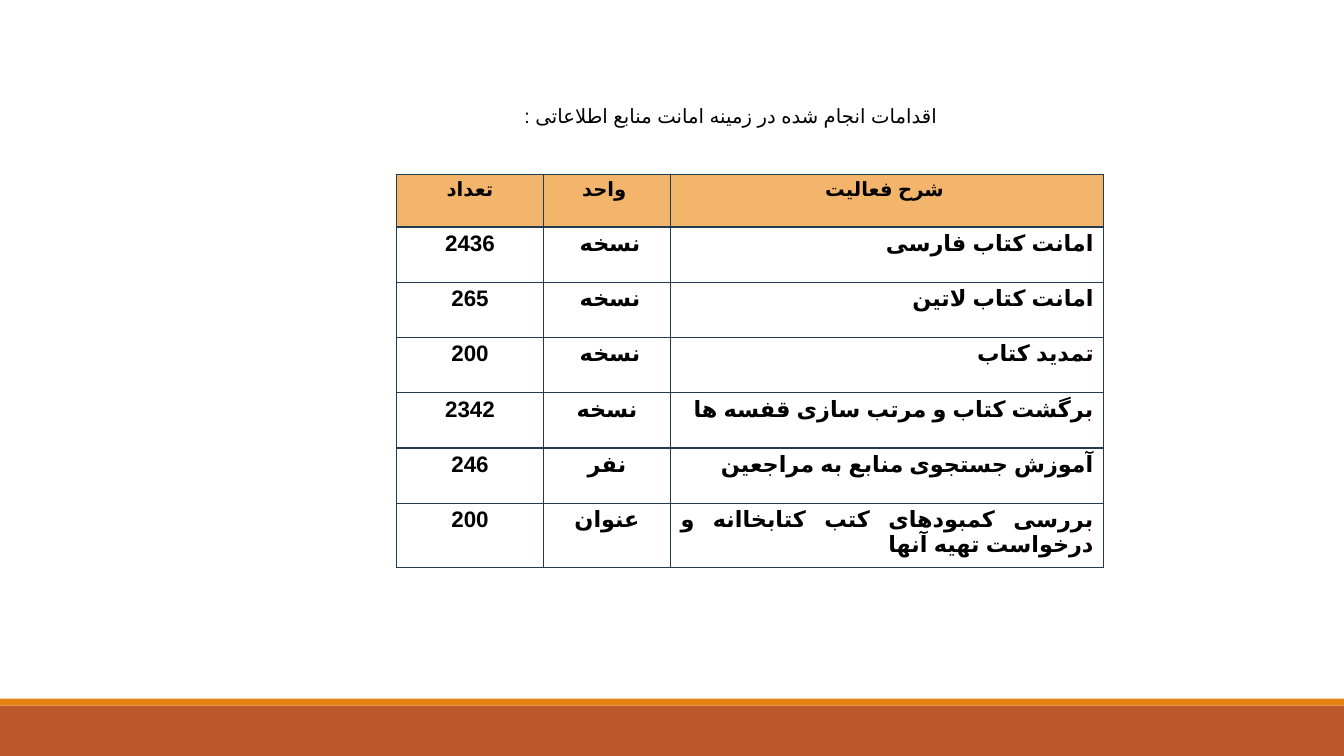
from dataclasses import dataclass

from lxml import etree
from pptx import Presentation
from pptx.dml.color import RGBColor
from pptx.enum.lang import MSO_LANGUAGE_ID
from pptx.enum.shapes import MSO_SHAPE
from pptx.enum.text import MSO_ANCHOR, MSO_AUTO_SIZE, PP_ALIGN
from pptx.oxml.ns import qn
from pptx.util import Pt

RECTANGLE = MSO_SHAPE.RECTANGLE
TOP = MSO_ANCHOR.TOP
NO_AUTOFIT = MSO_AUTO_SIZE.NONE
CENTER, RIGHT, JUSTIFY = PP_ALIGN.CENTER, PP_ALIGN.RIGHT, PP_ALIGN.JUSTIFY
PERSIAN = MSO_LANGUAGE_ID.FARSI

TITLE = "اقدامات انجام شده در زمینه امانت منابع اطلاعاتی :"
HEADER = ("تعداد", "واحد ", "شرح فعالیت ")
ACTIVITIES = [
    ("2436", "نسخه ", "امانت کتاب فارسی "),
    ("265", "نسخه ", "امانت کتاب لاتین "),
    ("200", "نسخه ", "تمدید کتاب "),
    ("2342", "نسخه", "برگشت کتاب و مرتب سازی قفسه ها "),
    ("246", "نفر", "آموزش جستجوی منابع به مراجعین "),
    ("200", "عنوان", "بررسی کمبودهای کتب کتابخاانه و درخواست تهیه آنها"),
]


@dataclass(frozen=True)
class Theme:
    font: str = "Calibri"
    complex_font: str = "Arial"
    text: str = "000000"
    header_fill: str = "F3B56C"
    border: str = "203A4E"
    footer: str = "BD582C"
    stripe: str = "E48312"
    small: int = 14
    large: int = 16
    border_width: int = 1


THEME = Theme()
SLIDE_WIDTH, SLIDE_HEIGHT = 960, 540
FOOTER_HEIGHT, STRIPE_HEIGHT = 36, 5
TITLE_BOX = (197.3, 69.1, 479.5, 25.2)
TABLE_LEFT, TABLE_TOP = 283.2, 124.5
COLUMN_WIDTHS = (105, 90.7, 309.6)
HEADER_HEIGHT, ROW_HEIGHT, LAST_ROW_HEIGHT = 37.6, 39.5, 45.7
CELL_MARGIN = 3


def color(value):
    return RGBColor.from_string(value)


def add_band(slide, top, height, fill):
    band = slide.shapes.add_shape(RECTANGLE, 0, Pt(top), Pt(SLIDE_WIDTH), Pt(height))
    band.shadow.inherit = False
    band.fill.solid()
    band.fill.fore_color.rgb = color(fill)
    band.line.fill.background()


def write(paragraph, text, size, alignment, bold=False, right_to_left=True):
    paragraph.alignment = alignment
    if right_to_left:
        paragraph._p.get_or_add_pPr().set("rtl", "1")
    run = paragraph.add_run()
    run.text = text
    run.font.name = THEME.font
    run.font.size = Pt(size)
    run.font.bold = bold
    run.font.language_id = PERSIAN
    run.font.color.rgb = color(THEME.text)
    etree.SubElement(run._r.get_or_add_rPr(), qn("a:cs"), typeface=THEME.complex_font)


def add_borders(cell):
    """Draw all four sides; the lines must precede the fill in the cell XML."""
    properties = cell._tc.get_or_add_tcPr()
    for index, side in enumerate(("lnL", "lnR", "lnT", "lnB")):
        line = etree.Element(qn(f"a:{side}"), w=str(Pt(THEME.border_width)))
        fill = etree.SubElement(line, qn("a:solidFill"))
        etree.SubElement(fill, qn("a:srgbClr"), val=THEME.border)
        properties.insert(index, line)


def add_title(slide):
    title = slide.shapes.title
    title.left, title.top, title.width, title.height = map(Pt, TITLE_BOX)
    frame = title.text_frame
    frame.word_wrap = True
    frame.auto_size = NO_AUTOFIT
    frame.vertical_anchor = TOP
    paragraph = frame.paragraphs[0]
    paragraph.line_spacing = 1.07
    paragraph.space_after = Pt(8)
    write(paragraph, TITLE, THEME.small, RIGHT)


def add_activity_table(slide):
    rows = [HEADER, *ACTIVITIES]
    heights = [HEADER_HEIGHT, *[ROW_HEIGHT] * (len(ACTIVITIES) - 1), LAST_ROW_HEIGHT]
    table = slide.shapes.add_table(
        len(rows), len(HEADER), Pt(TABLE_LEFT), Pt(TABLE_TOP),
        Pt(sum(COLUMN_WIDTHS)), Pt(sum(heights)),
    ).table
    for column, width in zip(table.columns, COLUMN_WIDTHS):
        column.width = Pt(width)
    for row_index, (row, height) in enumerate(zip(rows, heights)):
        table.rows[row_index].height = Pt(height)
        is_header = row_index == 0
        for column_index, text in enumerate(row):
            cell = table.cell(row_index, column_index)
            cell.margin_top = Pt(CELL_MARGIN)
            cell.margin_bottom = 0
            if is_header:
                cell.fill.solid()
                cell.fill.fore_color.rgb = color(THEME.header_fill)
            else:
                cell.fill.background()
            add_borders(cell)
            is_description = column_index == len(HEADER) - 1
            alignment = JUSTIFY if is_description and not is_header else CENTER
            size = THEME.small if is_header else THEME.large
            paragraph = cell.text_frame.paragraphs[0]
            write(paragraph, text, size, alignment, True, not is_header)


def main():
    presentation = Presentation()
    presentation.slide_width, presentation.slide_height = Pt(SLIDE_WIDTH), Pt(SLIDE_HEIGHT)
    slide = presentation.slides.add_slide(presentation.slide_layouts.get_by_name("Title Only"))
    footer_top = SLIDE_HEIGHT - FOOTER_HEIGHT
    add_band(slide, footer_top, FOOTER_HEIGHT, THEME.footer)
    add_band(slide, footer_top - STRIPE_HEIGHT, STRIPE_HEIGHT, THEME.stripe)
    add_title(slide)
    add_activity_table(slide)
    presentation.save("out.pptx")


if __name__ == "__main__":
    main()
